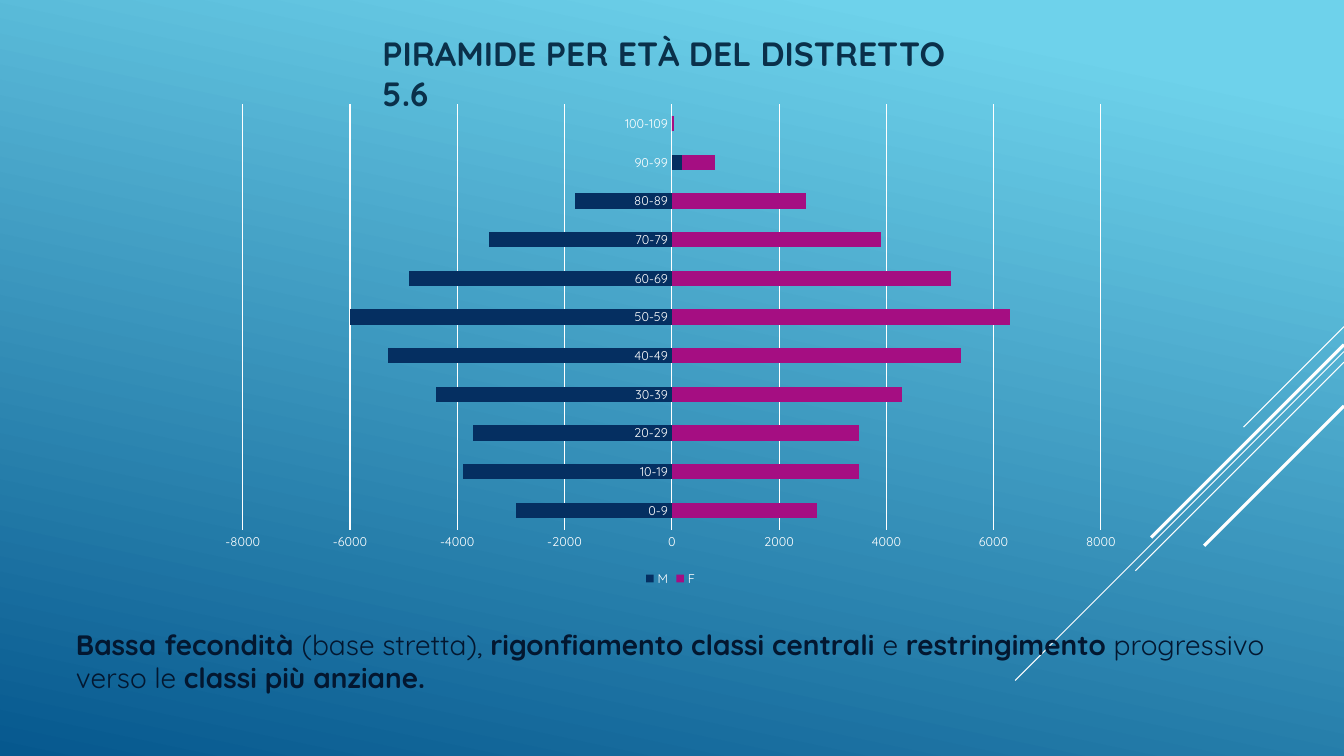
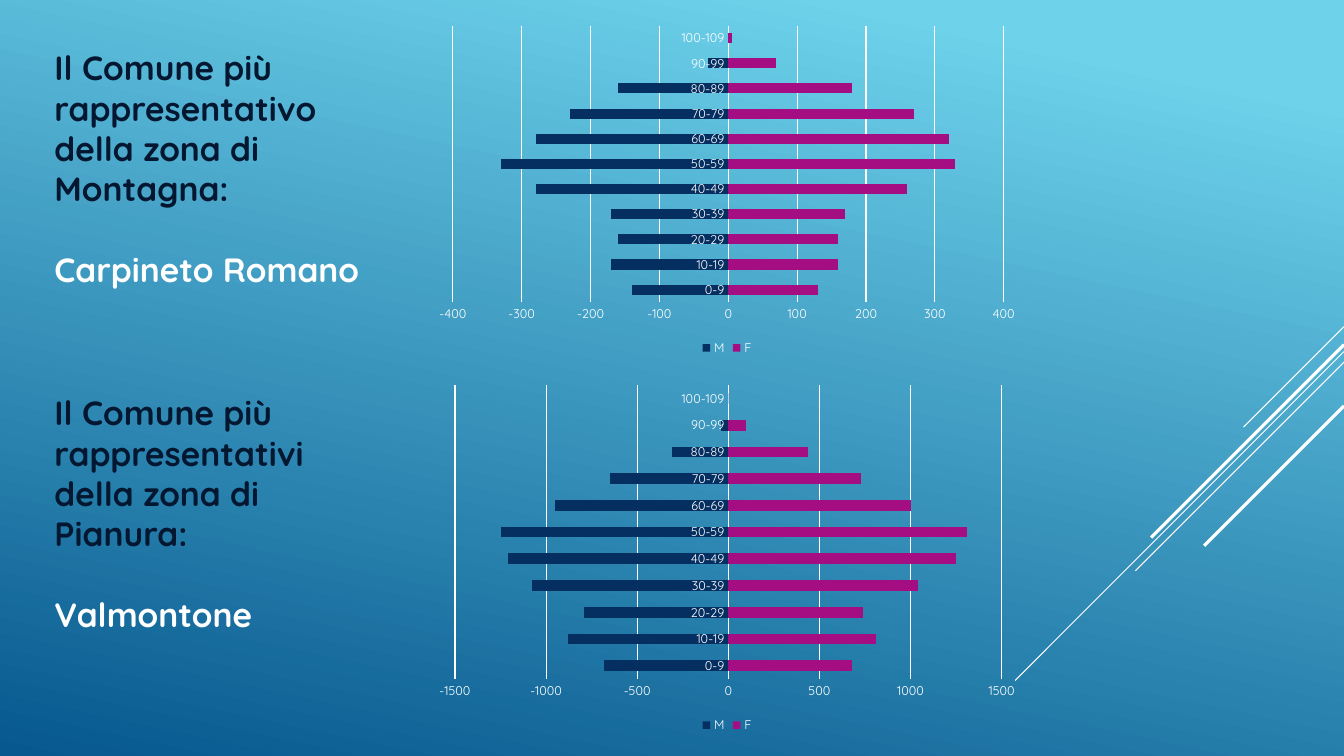
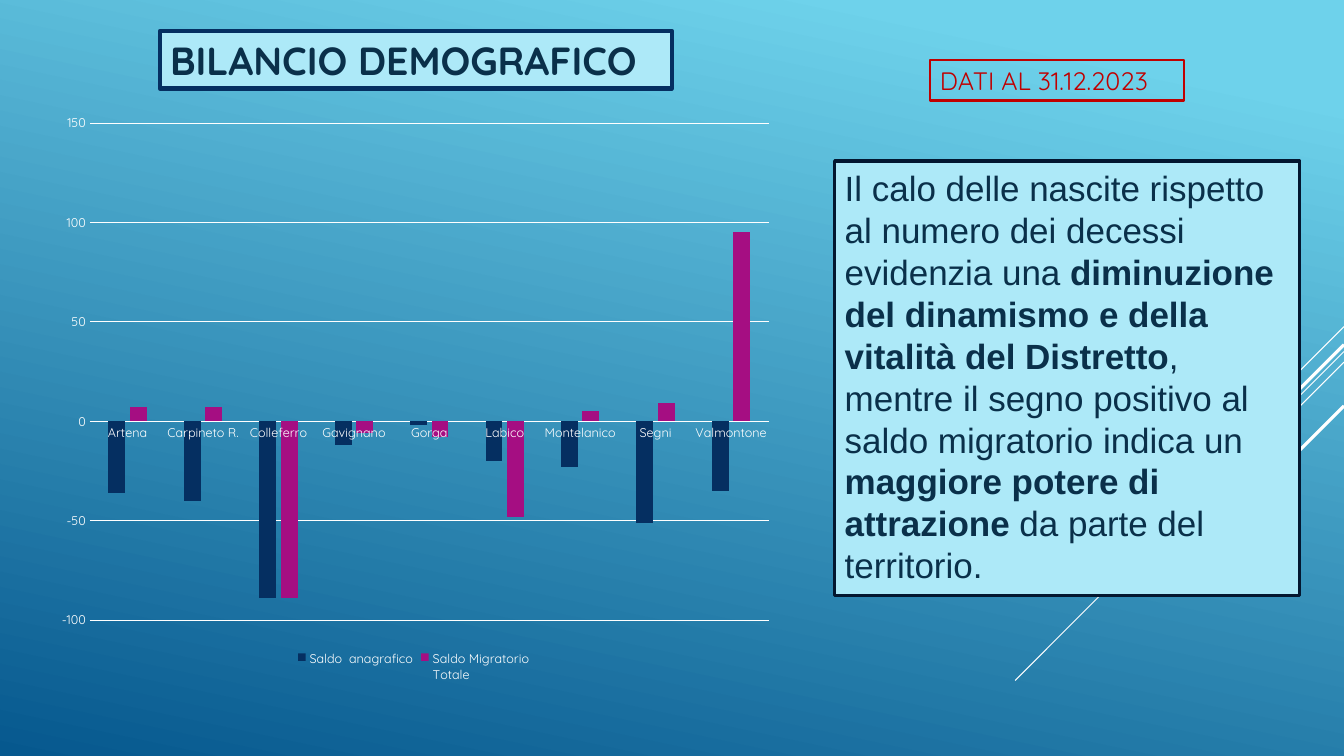
from dataclasses import dataclass

from lxml import etree
from pptx import Presentation
from pptx import util as u
from pptx.chart.data import CategoryChartData
from pptx.dml.color import RGBColor
from pptx.enum import chart as ch, shapes, text
from pptx.oxml.ns import qn


@dataclass(frozen=True)
class Theme:
    sky: str = "6ED2EB"
    sea: str = "06588E"
    ice: str = "ADE9F8"
    white: str = "FFFFFF"
    navy: str = "052F61"
    plum: str = "A50E82"
    red: str = "C00000"
    ink: str = "031730"
    teal: str = "0A304A"
    font: str = "Quicksand"
    plain: str = "Arial"
    head: int = 28
    lead: int = 24
    body: int = 25
    note: int = 20
    date: int = 18
    tick: int = 9
    leading: float = 1.2


T = Theme()
WIDE, HIGH = u.Inches(13.333), u.Inches(7.5)
AGES = [f"{a}-{a + 9}" for a in range(0, 110, 10)]
AGES[-1] = "100-109"

# Start height, run (shares of slide height, in percent) and line width
RAYS = [(43.2, 13.3, 0.75), (46.5, 43.5, 0.75), (47.9, 27.6, 0.75),
        (45.6, 25.5, 2.25), (53.7, 18.5, 2.25)]


def rgb(code):
    return RGBColor.from_string(code)


def place(box):
    """Turn percent shares of the slide into left, top, width, height."""
    return [int(share * side / 100)
            for share, side in zip(box, (WIDE, HIGH, WIDE, HIGH))]


def move(shape, box):
    shape.left, shape.top, shape.width, shape.height = place(box)
    return shape


def write(shape, lines, size, color, font=T.font, mid=False):
    """Fill a shape with lines; text between asterisks is bold."""
    frame = shape.text_frame
    frame.word_wrap = True
    frame.auto_size = text.MSO_AUTO_SIZE.NONE
    frame.vertical_anchor = (text.MSO_ANCHOR.MIDDLE if mid
                             else text.MSO_ANCHOR.TOP)
    for i, line in enumerate(lines):
        para = frame.add_paragraph() if i else frame.paragraphs[0]
        para.alignment = text.PP_ALIGN.LEFT
        para.line_spacing = u.Pt(size * T.leading)
        para.space_before = u.Pt(size * T.leading if i else 0)
        props = para._p.get_or_add_pPr()
        props.set("marL", "0")
        props.set("indent", "0")
        etree.SubElement(props, qn("a:buNone"))
        for k, part in enumerate(line.split("*")):
            if part:
                run = para.add_run()
                run.text = part
                run.font.size, run.font.name = u.Pt(size), font
                run.font.bold = k % 2 == 1
                run.font.color.rgb = rgb(T.white if i else color)


def border(shape, color, width, fill=None):
    shape.line.color.rgb = rgb(color)
    shape.line.width = u.Pt(width)
    if fill:
        shape.fill.solid()
        shape.fill.fore_color.rgb = rgb(fill)
    else:
        shape.fill.background()


def style(font):
    font.size, font.name = u.Pt(T.tick), T.font
    font.color.rgb = rgb(T.white)


def graph(slide, box, kind, cats, series, span, gap, overlap):
    data = CategoryChartData()
    data.categories = cats
    for name, vals in series:
        data.add_series(name, vals)
    chart = slide.shapes.add_chart(kind, *place(box), data).chart
    style(chart.font)
    chart.has_title = False
    chart.has_legend = True
    chart.legend.position = ch.XL_LEGEND_POSITION.BOTTOM
    chart.legend.include_in_layout = False
    style(chart.legend.font)
    plot = chart.plots[0]
    plot.gap_width, plot.overlap = gap, overlap
    plot.vary_by_categories = False
    for bars, color in zip(plot.series, (T.navy, T.plum)):
        bars.invert_if_negative = False
        bars.format.fill.solid()
        bars.format.fill.fore_color.rgb = rgb(color)
    cat, val = chart.category_axis, chart.value_axis
    for axis in (cat, val):
        axis.major_tick_mark = axis.minor_tick_mark = ch.XL_TICK_MARK.NONE
        style(axis.tick_labels.font)
    val.minimum_scale, val.maximum_scale, val.major_unit = span
    val.format.line.fill.background()
    val.has_major_gridlines = True
    for line in (cat.format.line, val.major_gridlines.format.line):
        line.color.rgb = rgb(T.white)
        line.width = u.Pt(0.75)


def pyramid(slide, box, men, women, top, step):
    graph(slide, box, ch.XL_CHART_TYPE.BAR_STACKED, AGES,
          [("M", men), ("F", women)], (-top, top, step), 150, 100)


def backdrop(master, slide):
    """Give the master its gradient and the rays at the right edge."""
    fill = master.background.fill
    fill.gradient()
    fill.gradient_angle = 258
    for stop, color, pos in zip(fill.gradient_stops, (T.sky, T.sea), (0.1, 1)):
        stop.color.rgb = rgb(color)
        stop.position = pos
    for start, run, width in RAYS:
        y, drop = int(HIGH * start / 100), int(HIGH * run / 100)
        ray = slide.shapes.add_connector(
            shapes.MSO_CONNECTOR.STRAIGHT, WIDE, y, WIDE - drop, y + drop)
        ray.line.color.rgb = rgb(T.white)
        ray.line.width = u.Pt(width)
        etree.SubElement(ray.element.spPr, qn("a:effectLst"))
        master.shapes.element.append(ray.element)


def district(slide):
    title, note = slide.placeholders
    write(move(title, (27.7, 3.7, 44.6, 6.7)),
          ["*PIRAMIDE PER ETÀ DEL DISTRETTO 5.6*"], T.lead, T.teal)
    write(move(note, (4.9, 82.3, 93.9, 13.9)),
          ["*Bassa fecondità *(base stretta), *rigonfiamento classi centrali *"
           "e *restringimento* progressivo verso le *classi più anziane.*"],
          T.note, T.ink)
    pyramid(slide, (15.4, 12.5, 69, 65.6),
            [-2900, -3900, -3700, -4400, -5300, -6000,
             -4900, -3400, -1800, 200, 0],
            [2700, 3500, 3500, 4300, 5400, 6300, 5200, 3900, 2500, 600, 40],
            8000, 2000)


def town(slide, holder, box, drop, lines, *data):
    """Place a label at the left of the box and a pyramid at its right."""
    x, y, w, h = box
    label = 0.36 * w
    write(move(holder, (x, y + drop, label, 0.75 * h)), lines, T.lead, T.ink)
    pyramid(slide, (x + 0.39 * w, y, 0.61 * w, h), *data)


def towns(slide):
    upper, lower = slide.placeholders
    town(slide, upper, (3.3, 2.5, 73.1, 45.1), 3.1,
         ["*Il Comune più rappresentativo della zona di Montagna:*",
          "*Carpineto Romano*"],
         [-140, -170, -160, -170, -280, -330, -280, -230, -160, -30, 0],
         [130, 160, 160, 170, 260, 330, 320, 270, 180, 70, 5], 400, 100)
    town(slide, lower, (3.3, 50, 73.1, 47.5), 1.2,
         ["*Il Comune più rappresentativi della zona di Pianura:*",
          "*Valmontone*"],
         [-680, -880, -790, -1080, -1210, -1250, -950, -650, -310, -40, 0],
         [680, 810, 740, 1040, 1250, 1310, 1000, 730, 440, 100, 0], 1500, 500)


def balance(slide):
    title, body = slide.placeholders
    write(move(title, (11.9, 4.1, 38.1, 7.6)), ["*BILANCIO DEMOGRAFICO*"],
          T.head, T.teal, mid=True)
    border(title, T.navy, 3, T.ice)
    write(move(body, (62.1, 21.3, 34.6, 57.5)),
          ["Il calo delle nascite rispetto al numero dei decessi evidenzia una "
           "*diminuzione del dinamismo e della vitalità del Distretto*, mentre "
           "il segno positivo al saldo migratorio indica un *maggiore potere "
           "di attrazione* da parte del territorio."],
          T.body, T.teal, T.plain)
    border(body, T.ink, 2.25, T.ice)
    graph(slide, (3.5, 13.7, 54.8, 77.1), ch.XL_CHART_TYPE.COLUMN_CLUSTERED,
          ["Artena", "Carpineto R.", "Colleferro", "Gavignano", "Gorga",
           "Labico", "Montelanico", "Segni", "Valmontone"],
          [("Saldo  anagrafico", [-36, -40, -89, -12, -2, -20, -23, -51, -35]),
           ("Saldo Migratorio \nTotale", [7, 7, -89, -6, -8, -48, 5, 9, 95])],
          (-100, 150, 50), 219, -27)
    date = slide.shapes.add_shape(shapes.MSO_SHAPE.RECTANGLE,
                                  *place((69.2, 8, 18.9, 5.3)))
    date.shadow.inherit = False
    border(date, T.red, 1.5)
    write(date, ["DATI AL 31.12.2023"], T.date, T.red, mid=True)


def main():
    deck = Presentation()
    deck.slide_width, deck.slide_height = WIDE, HIGH
    pages = []
    for build in (district, towns, balance):
        page = deck.slides.add_slide(deck.slide_layouts[1])
        build(page)
        pages.append(page)
    backdrop(deck.slide_master, pages[0])
    deck.save("out.pptx")


if __name__ == "__main__":
    main()
